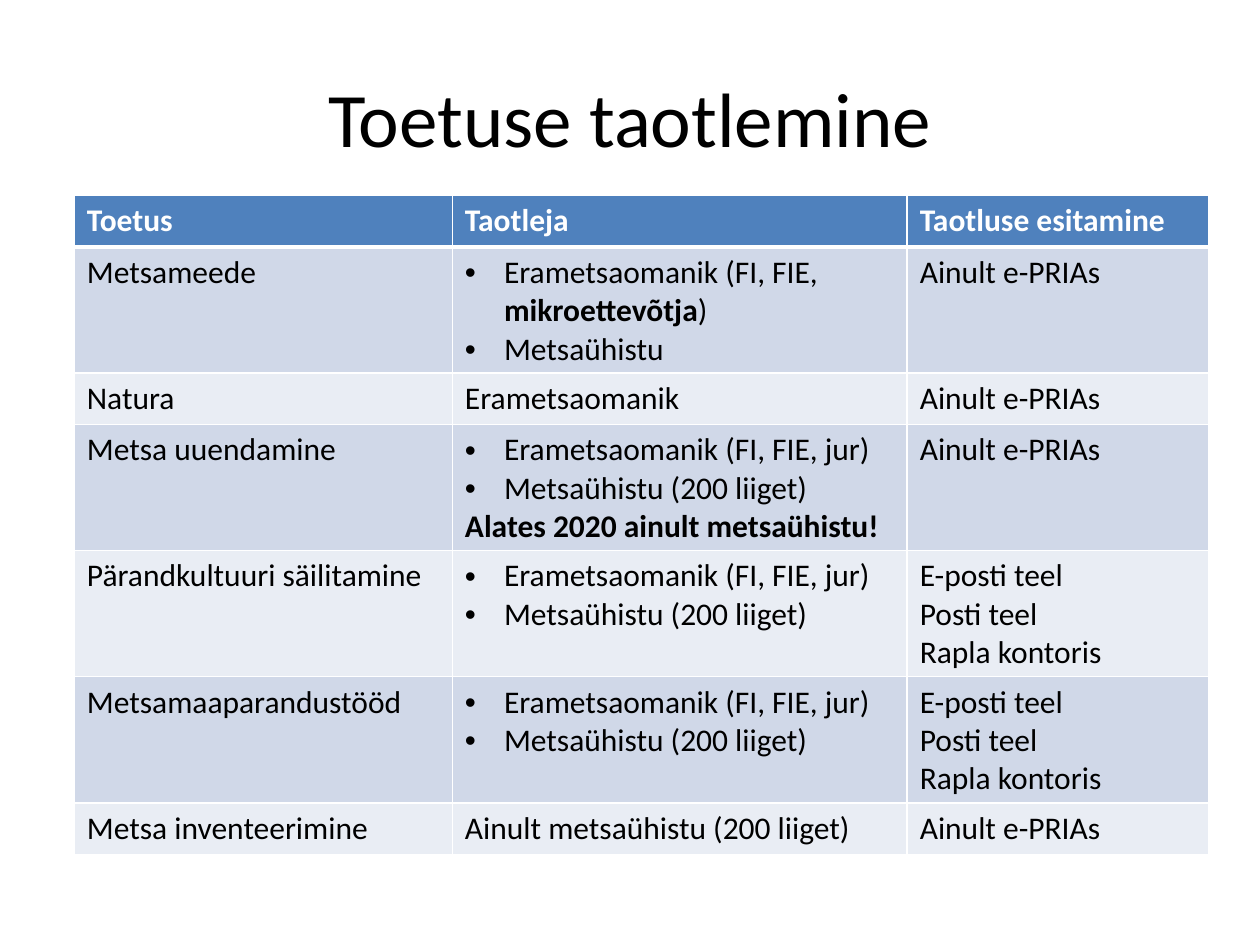
from lxml import etree
from pptx import Presentation
from pptx.dml.color import RGBColor
from pptx.enum.text import MSO_ANCHOR, PP_ALIGN
from pptx.oxml.ns import qn
from pptx.util import Inches, Pt

CENTER = PP_ALIGN.CENTER
MIDDLE = MSO_ANCHOR.MIDDLE
FONT = "Calibri"
COLORS = {
    "text": "000000",
    "white": "FFFFFF",
    "header": "4F81BD",
    "odd": "D0D8E8",
    "even": "E9EDF4",
}
BULLET = "• "
BOLD = "*"
ONLINE = "Ainult e-PRIAs"
BY_MAIL = "E-posti teel\nPosti teel\nRapla kontoris"
OWNER_OR_UNION = "• Erametsaomanik (FI, FIE, jur)\n• Metsaühistu (200 liiget)"
ROWS = [
    ("*Toetus*", "*Taotleja*", "*Taotluse esitamine*"),
    ("Metsameede", "• Erametsaomanik (FI, FIE, *mikroettevõtja*)\n• Metsaühistu", ONLINE),
    ("Natura", "Erametsaomanik", ONLINE),
    ("Metsa uuendamine", OWNER_OR_UNION + "\n*Alates 2020 ainult metsaühistu!*", ONLINE),
    ("Pärandkultuuri säilitamine", OWNER_OR_UNION, BY_MAIL),
    ("Metsamaaparandustööd", OWNER_OR_UNION, BY_MAIL),
    ("Metsa inventeerimine", "Ainult metsaühistu (200 liiget)", ONLINE),
]
COLUMN_WIDTHS = [3, 3.61, 2.39]
ROW_HEIGHT = 0.41


def write_paragraph(para, line, color):
    if line.startswith(BULLET):
        properties = para._p.get_or_add_pPr()
        properties.set("marL", str(Inches(0.31)))
        properties.set("indent", str(Inches(-0.31)))
        etree.SubElement(properties, qn("a:buFont"), typeface="Arial")
        etree.SubElement(properties, qn("a:buChar"), char="•")
        line = line.removeprefix(BULLET)
    for index, part in enumerate(line.split(BOLD)):
        if part:
            span = para.add_run()
            span.text = part
            span.font.name = FONT
            span.font.size = Pt(18)
            span.font.bold = index % 2 == 1
            span.font.color.rgb = RGBColor.from_string(color)


def add_borders(cell, bottom_width):
    properties = cell._tc.get_or_add_tcPr()
    for side, width in (("L", 1), ("R", 1), ("T", 1), ("B", bottom_width)):
        line = etree.SubElement(properties, qn(f"a:ln{side}"), w=str(Pt(width)))
        fill = etree.SubElement(line, qn("a:solidFill"))
        etree.SubElement(fill, qn("a:srgbClr"), val=COLORS["white"])


deck = Presentation()
deck.slide_width = Inches(10)
deck.slide_height = Inches(7.5)
page = deck.slides.add_slide(deck.slide_layouts[6])

title_box = page.shapes.add_textbox(Inches(0.5), Inches(0.3), Inches(9), Inches(1.25))
title_frame = title_box.text_frame
title_frame.word_wrap = True
title_frame.vertical_anchor = MIDDLE
title_frame.text = "Toetuse taotlemine"
title = title_frame.paragraphs[0]
title.alignment = CENTER
title_font = title.runs[0].font
title_font.name = FONT
title_font.size = Pt(44)
title_font.color.rgb = RGBColor.from_string(COLORS["text"])

table = page.shapes.add_table(
    len(ROWS), len(COLUMN_WIDTHS), Inches(0.59), Inches(1.55),
    Inches(sum(COLUMN_WIDTHS)), Inches(ROW_HEIGHT * len(ROWS)),
).table
for column, width in zip(table.columns, COLUMN_WIDTHS):
    column.width = Inches(width)

for row_index, row in enumerate(ROWS):
    is_header = row_index == 0
    fill_name = "header" if is_header else "odd" if row_index % 2 else "even"
    text_color = COLORS["white" if is_header else "text"]
    for column_index, content in enumerate(row):
        cell = table.cell(row_index, column_index)
        add_borders(cell, 3 if is_header else 1)
        cell.fill.solid()
        cell.fill.fore_color.rgb = RGBColor.from_string(COLORS[fill_name])
        frame = cell.text_frame
        for line_index, line in enumerate(content.split("\n")):
            para = frame.add_paragraph() if line_index else frame.paragraphs[0]
            write_paragraph(para, line, text_color)

deck.save("out.pptx")
